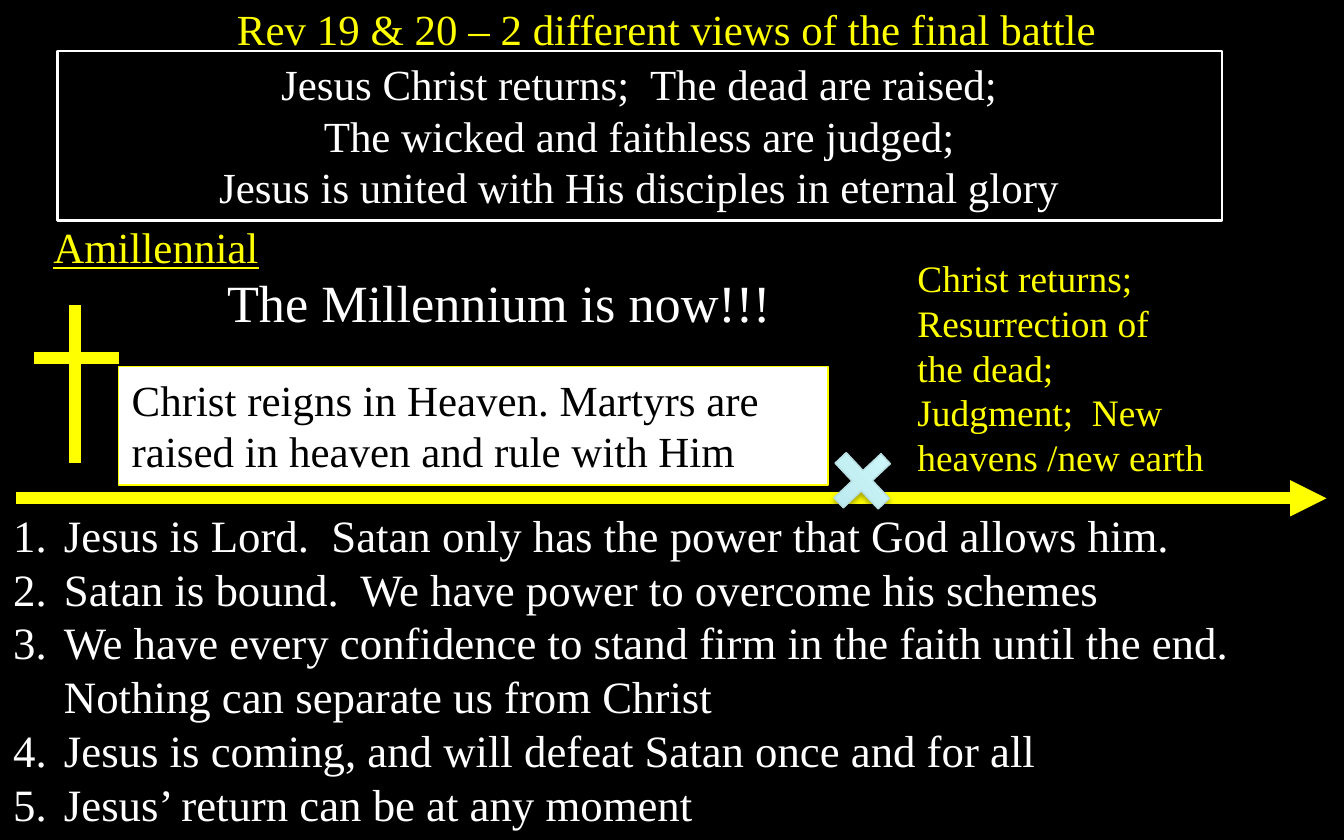
from lxml import etree
from pptx import Presentation
from pptx import util as u
from pptx.dml.color import RGBColor
from pptx.enum import shapes, text
from pptx.oxml.ns import qn

COLORS = {"black": "000000", "white": "FFFFFF", "yellow": "FFFF00",
          "aqua": "B5E5E9", "pale": "D3FBFF", "edge": "B6DCDF"}
LEFT, CENTER = text.PP_ALIGN.LEFT, text.PP_ALIGN.CENTER


class Board:
    """Draws styled elements on the current slide."""

    font = "Times New Roman"

    def __init__(self, slide):
        self.s = slide
        fill = slide.background.fill
        fill.solid()
        fill.fore_color.rgb = self.rgb("black")

    def rgb(self, name):
        return RGBColor.from_string(COLORS[name])

    def set_text(self, sp, lines, size, color, align=LEFT, underline=None, numbered=False):
        tf = sp.text_frame
        tf.word_wrap = True
        tf.text = lines
        for p in tf.paragraphs:
            p.alignment = align
            if numbered:
                pPr = p._p.get_or_add_pPr()
                pPr.set("marL", str(u.Cm(0.96)))
                pPr.set("indent", str(-u.Cm(0.96)))
                etree.SubElement(pPr, qn("a:buFont"), typeface="+mj-lt")
                etree.SubElement(pPr, qn("a:buAutoNum"), type="arabicPeriod")
            for r in p.runs:
                r.font.name = self.font
                r.font.size = u.Pt(size)
                r.font.underline = underline
                r.font.color.rgb = self.rgb(color)

    def label(self, box, lines, size, color, **style):
        sp = self.s.shapes.add_textbox(*map(u.Cm, box))
        self.set_text(sp, lines, size, color, **style)

    def panel(self, box, lines, color, edge, width, fill=None, align=LEFT):
        sp = self.s.shapes.add_shape(shapes.MSO_SHAPE.RECTANGLE, *map(u.Cm, box))
        sp.shadow.inherit = False
        if fill:
            sp.fill.solid()
            sp.fill.fore_color.rgb = self.rgb(fill)
        else:
            sp.fill.background()
        sp.line.color.rgb = self.rgb(edge)
        sp.line.width = u.Pt(width)
        sp.text_frame.vertical_anchor = text.MSO_ANCHOR.TOP
        self.set_text(sp, lines, 23, color, align)

    def bar(self, ends, arrow=False):
        sp = self.s.shapes.add_connector(shapes.MSO_CONNECTOR.STRAIGHT, *map(u.Cm, ends))
        sp.line.color.rgb = self.rgb("yellow")
        sp.line.width = u.Pt(6.5)
        if arrow:
            etree.SubElement(sp.line._ln, qn("a:tailEnd"), type="triangle")
        etree.SubElement(sp._element.spPr, qn("a:effectLst"))

    def marker(self, box, angle):
        sp = self.s.shapes.add_shape(shapes.MSO_SHAPE.CROSS, *map(u.Cm, box))
        sp.adjustments[0] = 0.39
        sp.rotation = angle
        sp.fill.gradient()
        sp.fill.gradient_angle = 90
        for stop, name in zip(sp.fill.gradient_stops, ("aqua", "pale")):
            stop.color.rgb = self.rgb(name)
        sp.line.color.rgb = self.rgb("edge")
        sp.line.width = u.Pt(0)
        sp.shadow.inherit = False
        shadow = etree.SubElement(
            sp._element.spPr.find(qn("a:effectLst")), qn("a:outerShdw"),
            blurRad=str(u.Pt(3.1)), dist=str(u.Pt(1.8)), dir="5400000", rotWithShape="0")
        tint = etree.SubElement(shadow, qn("a:srgbClr"), val=COLORS["black"])
        etree.SubElement(tint, qn("a:alpha"), val="35000")


def main():
    prs = Presentation()
    prs.slide_width, prs.slide_height = u.Cm(25.4), u.Cm(15.88)
    board = Board(prs.slides.add_slide(prs.slide_layouts[6]))

    board.label((0, -0.08, 25.22, 1.24),
                "Rev 19 & 20 – 2 different views of the final battle",
                23, "yellow", align=CENTER)
    board.panel((1.09, 0.97, 22, 3.2),
                "Jesus Christ returns;  The dead are raised;\v"
                "The wicked and faithless are judged;\v"
                "Jesus is united with His disciples in eternal glory",
                "white", "white", 1.25, align=CENTER)
    board.label((3.23, 4.98, 12.4, 1.45), "The Millennium is now!!!",
                28, "white", align=CENTER)
    board.label((0, 9.47, 24.92, 6.4), "\n".join((
        "Jesus is Lord.  Satan only has the power that God allows him.",
        "Satan is bound.  We have power to overcome his schemes",
        "We have every confidence to stand firm in the faith until the end.  "
        "Nothing can separate us from Christ",
        "Jesus is coming, and will defeat Satan once and for all",
        "Jesus’ return can be at any moment")), 24, "white", numbered=True)
    board.label((-0.15, 4.04, 6.2, 1.24), "Amillennial", 23, "yellow",
                align=CENTER, underline=True)

    board.bar((1.42, 5.77, 1.42, 8.76))
    board.bar((2.24, 6.76, 0.64, 6.76))
    board.bar((0.3, 9.42, 25.07, 9.42), arrow=True)
    board.marker((15.7, 8.48, 1.19, 1.22), 46.8)

    board.label((17.09, 4.7, 7.32, 4.52),
                "Christ returns;\nResurrection of\nthe dead;\n"
                "Judgment;  New heavens /new earth", 20, "yellow")
    board.panel((2.24, 6.93, 13.41, 2.24),
                "Christ reigns in Heaven. Martyrs are raised in heaven and rule with Him",
                "black", "yellow", 0.75, fill="white")
    prs.save("out.pptx")


if __name__ == "__main__":
    main()
